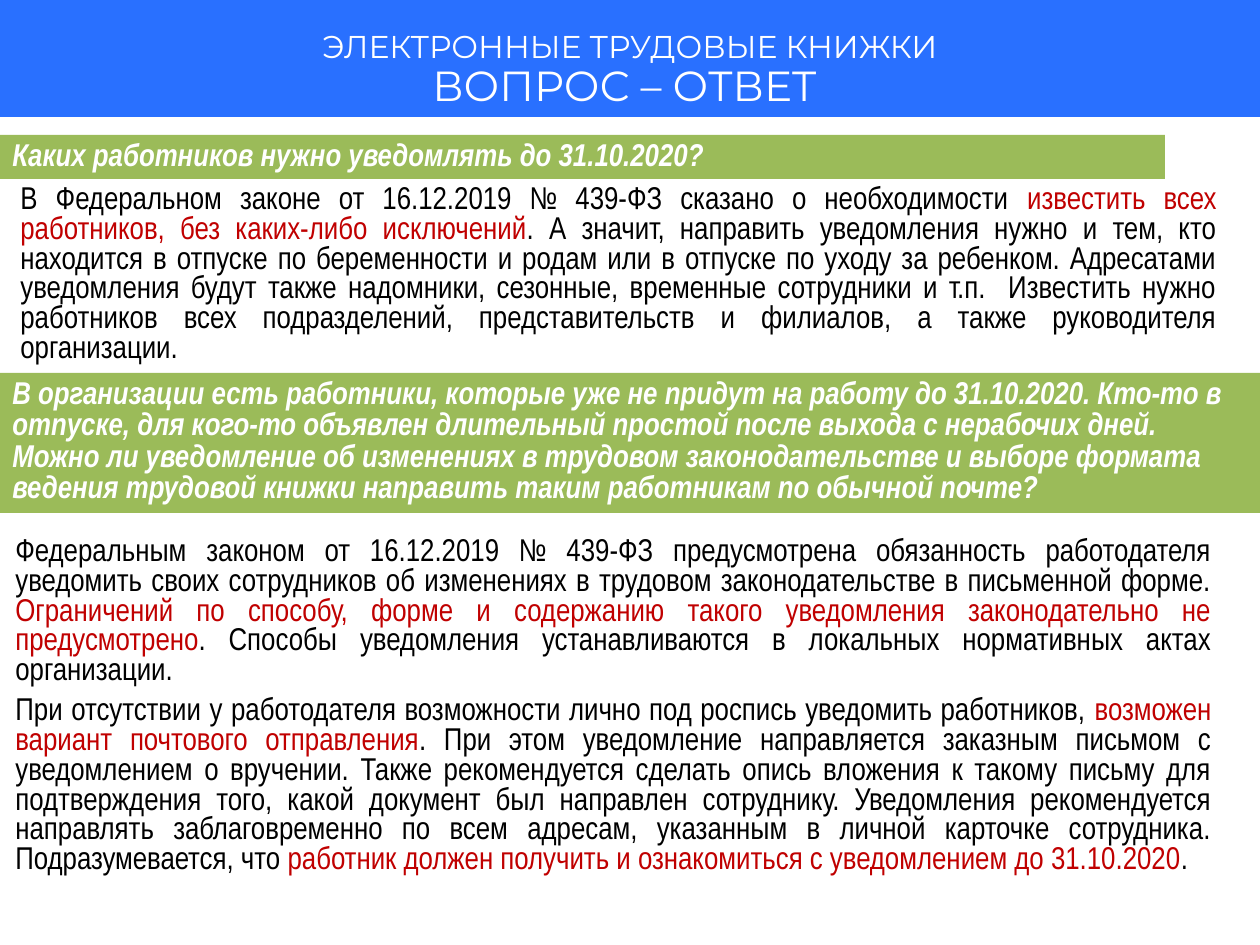
from pptx import Presentation
from pptx import util as u
from pptx.dml.color import RGBColor
from pptx.enum import shapes, text

PX = 9144 * 100 // 126  # EMU in one px, 126 px to the inch
WHITE = RGBColor(0xFF, 0xFF, 0xFF)
BLACK = RGBColor(0, 0, 0)
RED = RGBColor(0xC0, 0, 0)
GREEN = RGBColor(0x9B, 0xBB, 0x59)
BLUE = RGBColor(0x29, 0x70, 0xFF)
BODY, HEAD = "Arial Narrow", "Montserrat"

# Content: title lines with sizes
TITLE = [("ЭЛЕКТРОННЫЕ ТРУДОВЫЕ КНИЖКИ", 18), ("ВОПРОС – ОТВЕТ ", 24)]

# Question bands: box in px, wording
ASKS = [
    ((0, 135, 1165, 44), "Каких работников нужно уведомлять до 31.10.2020?"),
    ((0, 373, 1260, 140),
     "В организации есть работники, которые уже не придут на работу до 31.10.2020. "
     "Кто-то в отпуске, для кого-то объявлен длительный простой после выхода с "
     "нерабочих дней. Можно ли уведомление об изменениях в трудовом законодательстве "
     "и выборе формата ведения трудовой книжки направить таким работникам по обычной почте?"),
]

# Answers: box in px, paragraphs whose runs alternate black and red
REPLIES = [
    ((8, 180, 1221, 193), [
        ["В Федеральном законе от 16.12.2019 № 439-ФЗ сказано о необходимости ",
         "известить всех работников, без каких-либо исключений",
         ". А значит, направить уведомления нужно и тем, кто находится в отпуске по "
         "беременности и родам или в отпуске по уходу за ребенком. Адресатами "
         "уведомления будут также надомники, сезонные, временные сотрудники и т.п.  "
         "Известить нужно работников всех подразделений, представительств и филиалов, "
         "а также руководителя организации."],
    ]),
    ((3, 532, 1221, 354), [
        ["Федеральным законом от 16.12.2019 № 439-ФЗ предусмотрена обязанность "
         "работодателя уведомить своих сотрудников об изменениях в трудовом "
         "законодательстве в письменной форме. ",
         "Ограничений по способу, форме и содержанию такого уведомления "
         "законодательно не предусмотрено",
         ". Способы уведомления устанавливаются в локальных нормативных актах организации."],
        ["При отсутствии у работодателя возможности лично под роспись уведомить работников, ",
         "возможен вариант почтового отправления",
         ". При этом уведомление направляется заказным письмом с уведомлением о вручении. "
         "Также рекомендуется сделать опись вложения к такому письму для подтверждения "
         "того, какой документ был направлен сотруднику. Уведомления рекомендуется "
         "направлять заблаговременно по всем адресам, указанным в личной карточке "
         "сотрудника. Подразумевается, что ",
         "работник должен получить и ознакомиться с уведомлением до 31.10.2020",
         ". "],
    ]),
]

prs = Presentation()
prs.slide_width, prs.slide_height = u.Inches(10), u.Inches(7.5)
slide = prs.slides.add_slide(prs.slide_layouts[6])


def place(box):
    return [n * PX for n in box]


def add_band(box, color):
    band = slide.shapes.add_shape(shapes.MSO_SHAPE.RECTANGLE, *place(box))
    band.shadow.inherit = False
    band.fill.solid()
    band.fill.fore_color.rgb = color
    band.line.fill.background()
    return band


def fill_text(shape, paras, align, lead, after=0):
    """Each paragraph is a list of (words, size, font, color, strong) runs."""
    frame = shape.text_frame
    frame.word_wrap = True
    frame.auto_size = text.MSO_AUTO_SIZE.SHAPE_TO_FIT_TEXT
    frame.vertical_anchor = text.MSO_ANCHOR.TOP
    for i, runs in enumerate(paras):
        para = frame.add_paragraph() if i else frame.paragraphs[0]
        para.alignment = align
        para.line_spacing = u.Pt(lead)
        para.space_after = u.Pt(after)
        for words, size, font, color, strong in runs:
            run = para.add_run()
            run.text = words
            run.font.size = u.Pt(size)
            run.font.name = font
            run.font.color.rgb = color
            run.font.bold = run.font.italic = strong


# Questions on green bands
for box, words in ASKS:
    fill_text(add_band(box, GREEN), [[(words, 18, BODY, WHITE, True)]],
              text.PP_ALIGN.LEFT, 18)

# Answers
for box, paras in REPLIES:
    rows = [[(words, 18, BODY, RED if i % 2 else BLACK, False)
             for i, words in enumerate(parts)] for parts in paras]
    fill_text(slide.shapes.add_textbox(*place(box)), rows,
              text.PP_ALIGN.JUSTIFY, 17, 6)

# Title on the blue band
add_band((-1, 0, 1261, 117), BLUE)
fill_text(slide.shapes.add_textbox(*place((0, 13, 1260, 104))),
          [[(words, size, HEAD, WHITE, False)] for words, size in TITLE],
          text.PP_ALIGN.CENTER, 26)

prs.save("out.pptx")
